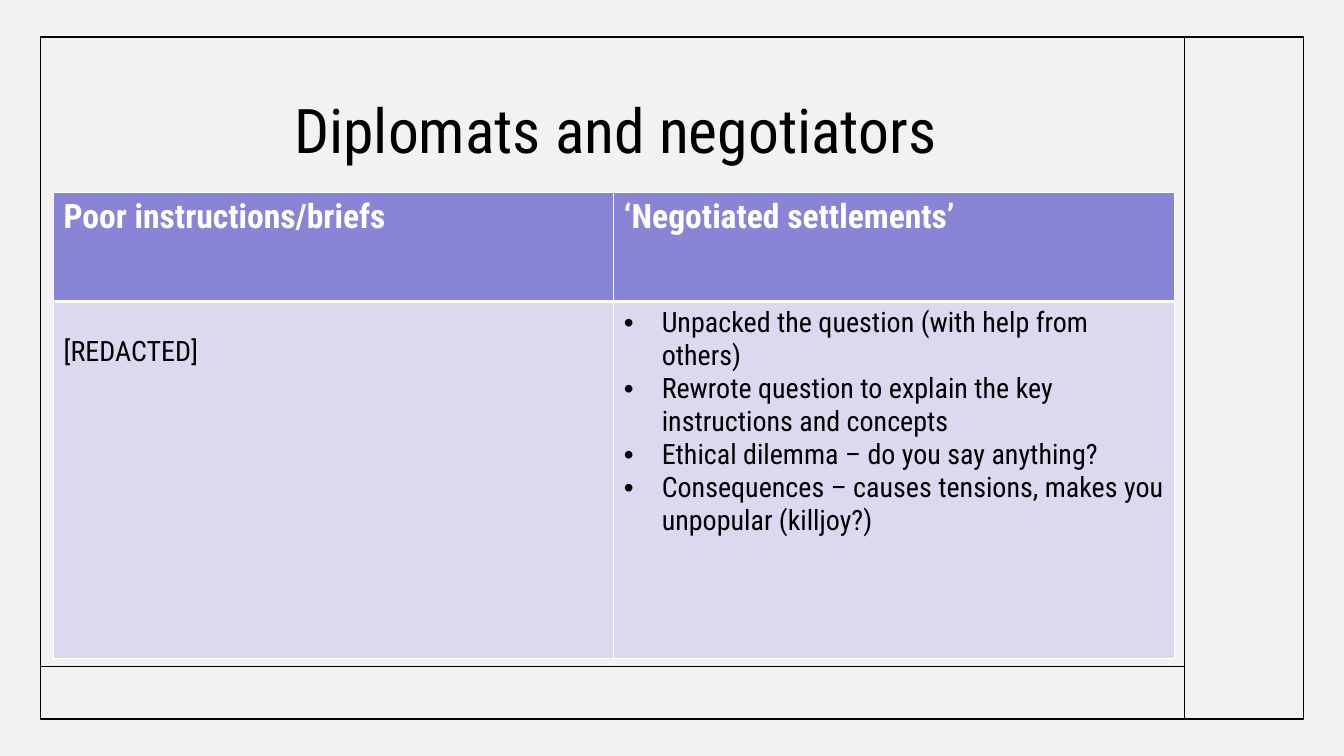
from dataclasses import dataclass

from lxml import etree
from pptx import Presentation
from pptx.dml.color import RGBColor
from pptx.enum.shapes import MSO_CONNECTOR, MSO_SHAPE
from pptx.enum.text import MSO_ANCHOR, PP_ALIGN
from pptx.oxml.ns import qn
from pptx.util import Pt

RECTANGLE = MSO_SHAPE.RECTANGLE
STRAIGHT = MSO_CONNECTOR.STRAIGHT
MIDDLE = MSO_ANCHOR.MIDDLE
CENTER = PP_ALIGN.CENTER
TITLE_ONLY = 5


@dataclass(frozen=True)
class Theme:
    font: str = "Roboto Condensed"
    background: str = "F2F2F2"
    ink: str = "000000"
    white: str = "FFFFFF"
    header_fill: str = "8885D7"
    body_fill: str = "DAD9F0"
    title_size: int = 44
    header_size: int = 24
    body_size: int = 20
    thin: int = 1
    thick: int = 3


THEME = Theme()

HEADINGS = ["Poor instructions/briefs", "‘Negotiated settlements’"]
BRIEFS = ["[REDACTED]"]
SETTLEMENTS = [
    "Unpacked the question (with help from others)",
    "Rewrote question to explain the key instructions and concepts",
    "Ethical dilemma – do you say anything?",
    "Consequences – causes tensions, makes you unpopular (killjoy?)",
]


def color(code):
    return RGBColor.from_string(code)


def style_font(para, size, code, bold=False):
    para.font.name = THEME.font
    para.font.size = Pt(size)
    para.font.bold = bold
    para.font.color.rgb = color(code)


def style_line(line):
    line.color.rgb = color(THEME.ink)
    line.width = Pt(THEME.thin)


def add_frame(page, left, top, width, height):
    frame = page.shapes.add_shape(RECTANGLE, Pt(left), Pt(top), Pt(width), Pt(height))
    frame.shadow.inherit = False
    frame.fill.background()
    style_line(frame.line)


def add_rule(page, x1, y1, x2, y2):
    rule = page.shapes.add_connector(STRAIGHT, Pt(x1), Pt(y1), Pt(x2), Pt(y2))
    style_line(rule.line)
    etree.SubElement(rule._element.spPr, qn("a:effectLst"))


def set_title(page, text, left, top, width, height):
    title = page.shapes.title
    title.left, title.top = Pt(left), Pt(top)
    title.width, title.height = Pt(width), Pt(height)
    title.text_frame.text = text
    title.text_frame.word_wrap = True
    title.text_frame.vertical_anchor = MIDDLE
    para = title.text_frame.paragraphs[0]
    para.alignment = CENTER
    para.line_spacing = 0.9
    style_font(para, THEME.title_size, THEME.ink)


def add_borders(cell, top, bottom):
    properties = cell._tc.get_or_add_tcPr()
    widths = {"lnL": THEME.thin, "lnR": THEME.thin, "lnT": top, "lnB": bottom}
    for side, width in widths.items():
        border = etree.SubElement(properties, qn(f"a:{side}"), w=str(Pt(width)))
        fill = etree.SubElement(border, qn("a:solidFill"))
        etree.SubElement(fill, qn("a:srgbClr"), val=THEME.white)


def add_bullet(para, indent):
    properties = para._p.get_or_add_pPr()
    properties.set("marL", str(Pt(indent)))
    properties.set("indent", str(-Pt(indent)))
    bullet_font = etree.Element(qn("a:buFont"), typeface="Arial")
    bullet = etree.Element(qn("a:buChar"), char="•")
    properties.insert(0, bullet_font)
    bullet_font.addnext(bullet)


def fill_cell(cell, lines, header=False, bulleted=False):
    if header:
        add_borders(cell, THEME.thin, THEME.thick)
    else:
        add_borders(cell, THEME.thick, THEME.thin)
    cell.fill.solid()
    cell.fill.fore_color.rgb = color(THEME.header_fill if header else THEME.body_fill)
    cell.text = "\n".join(lines)
    for para in cell.text_frame.paragraphs:
        if header:
            style_font(para, THEME.header_size, THEME.white, bold=True)
        else:
            style_font(para, THEME.body_size, THEME.ink)
        if bulleted:
            add_bullet(para, 27)


def add_comparison(page, left, top, column_width, row_heights):
    box = page.shapes.add_table(2, 2, Pt(left), Pt(top),
                                Pt(2 * column_width), Pt(sum(row_heights)))
    table = box.table
    table.horz_banding = False
    for column in table.columns:
        column.width = Pt(column_width)
    for row, height in zip(table.rows, row_heights):
        row.height = Pt(height)
    for index, heading in enumerate(HEADINGS):
        fill_cell(table.cell(0, index), [heading], header=True)
    fill_cell(table.cell(1, 0), BRIEFS)
    table.cell(1, 0).margin_top = Pt(24.5)
    fill_cell(table.cell(1, 1), SETTLEMENTS, bulleted=True)


def main():
    deck = Presentation()
    deck.slide_width, deck.slide_height = Pt(960), Pt(540)
    page = deck.slides.add_slide(deck.slide_layouts[TITLE_ONLY])
    page.background.fill.solid()
    page.background.fill.fore_color.rgb = color(THEME.background)

    # Frame with a right-hand column and a bottom strip
    add_frame(page, 28.8, 26.5, 902.2, 487.2)
    add_rule(page, 846, 26.5, 846, 513.7)
    add_rule(page, 28.8, 476, 846, 476)

    # Title and comparison table
    set_title(page, "Diplomats and negotiators", 66.2, 43.2, 747.4, 104.4)
    add_comparison(page, 38.2, 137.5, 400.3, [77.8, 254.9])

    deck.save("out.pptx")


if __name__ == "__main__":
    main()
